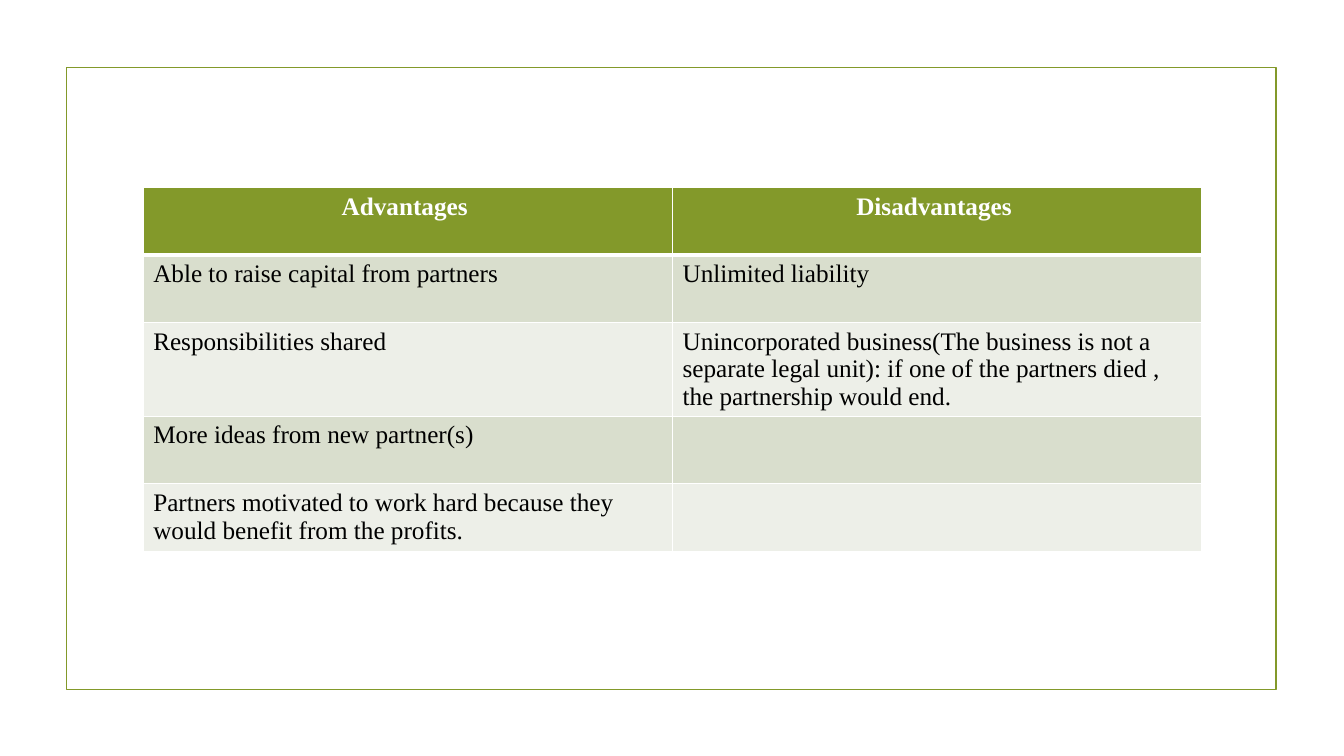
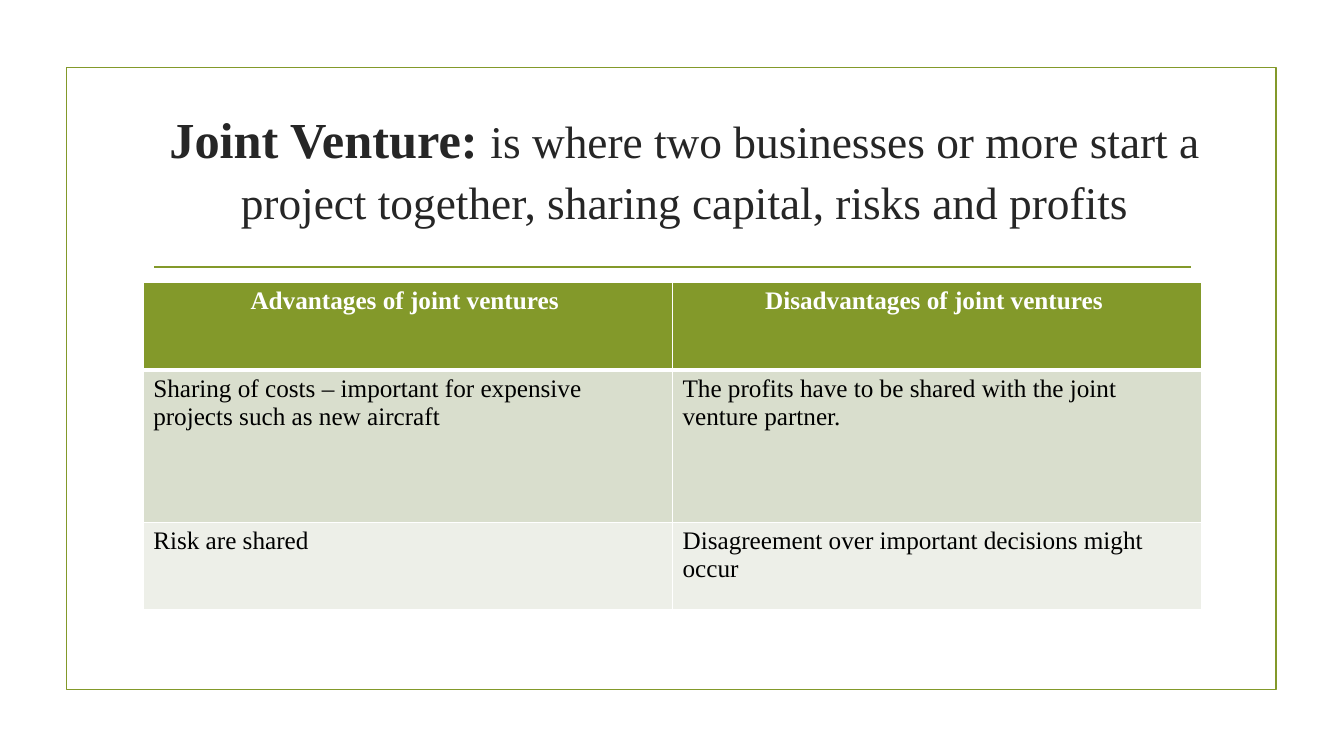
from dataclasses import dataclass

from lxml import etree
from pptx import Presentation
from pptx import util as u
from pptx.dml.color import RGBColor
from pptx.enum import shapes, text
from pptx.oxml import ns

PX = 9144


@dataclass(frozen=True)
class Theme:
    """Hold the colours, font and sizes that the slides share."""
    font: str = "Times New Roman"
    green: str = "83992A"
    ink: str = "262626"
    black: str = "000000"
    white: str = "FFFFFF"
    bands: tuple = ("D9DECD", "EDEFE8")
    term_size: float = 36
    title_size: float = 32.4
    table_size: float = 18
    line_width: float = 1.25
    grid_width: float = 1
    header_rule_width: float = 3


THEME = Theme()


def px(*lengths):
    """Turn pixel lengths into EMU."""
    return [u.Emu(length * PX) for length in lengths]


def rgb(colour):
    """Return the colour object for a hex string."""
    return RGBColor.from_string(colour)


def add_run(paragraph, words, size, colour, bold=False):
    """Append one styled run to a paragraph."""
    run = paragraph.add_run()
    run.text = words
    run.font.name = THEME.font
    run.font.size = u.Pt(size)
    run.font.bold = bold
    run.font.color.rgb = rgb(colour)


def style_line(shape):
    """Give a shape or connector the green outline."""
    shape.line.color.rgb = rgb(THEME.green)
    shape.line.width = u.Pt(THEME.line_width)


def add_frame(slide, left, top, width, height):
    """Draw the border around the slide content."""
    frame = slide.shapes.add_shape(shapes.MSO_SHAPE.RECTANGLE, *px(left, top, width, height))
    frame.shadow.inherit = False
    frame.fill.background()
    style_line(frame)


def add_title(slide, left, top, width, height, term, definition):
    """Write a bold term and its definition above a rule."""
    box = slide.shapes.add_textbox(*px(left, top, width, height))
    frame = box.text_frame
    frame.word_wrap = True
    frame.vertical_anchor = text.MSO_ANCHOR.MIDDLE
    paragraph = frame.paragraphs[0]
    paragraph.alignment = text.PP_ALIGN.CENTER
    paragraph.line_spacing = 1.1
    add_run(paragraph, term, THEME.term_size, THEME.ink, bold=True)
    add_run(paragraph, definition, THEME.title_size, THEME.ink)

    rule_left, rule_top = left - 1, top + height + 26
    rule = slide.shapes.add_connector(
        shapes.MSO_CONNECTOR.STRAIGHT,
        *px(rule_left, rule_top, rule_left + 1028, rule_top))
    style_line(rule)
    etree.SubElement(rule._element.spPr, ns.qn("a:effectLst"))


def set_borders(cell, bottom_width, top_width):
    """Draw white lines on the four sides of a cell."""
    properties = cell._tc.get_or_add_tcPr()
    widths = {"L": THEME.grid_width, "R": THEME.grid_width, "T": top_width, "B": bottom_width}
    for position, (side, width) in enumerate(widths.items()):
        line = etree.Element(ns.qn(f"a:ln{side}"), w=str(u.Pt(width)))
        fill = etree.SubElement(line, ns.qn("a:solidFill"))
        etree.SubElement(fill, ns.qn("a:srgbClr"), val=THEME.white)
        properties.insert(position, line)


def fill_cell(cell, words, row):
    """Style one cell by its row and write its text."""
    header = row == 0
    cell.fill.solid()
    cell.fill.fore_color.rgb = rgb(THEME.green if header else THEME.bands[(row - 1) % 2])
    set_borders(
        cell,
        THEME.header_rule_width if header else THEME.grid_width,
        THEME.header_rule_width if row == 1 else THEME.grid_width)
    if words:
        paragraph = cell.text_frame.paragraphs[0]
        paragraph.alignment = text.PP_ALIGN.CENTER if header else text.PP_ALIGN.LEFT
        add_run(paragraph, words, THEME.table_size,
                THEME.white if header else THEME.black, bold=header)


def add_comparison(slide, left, top, width, heights, rows):
    """Place a table with equal columns and the given row heights."""
    columns = len(rows[0])
    shape = slide.shapes.add_table(
        len(rows), columns, *px(left, top, width, sum(heights)))
    table = shape.table
    table.first_row = table.horz_banding = False
    for column in table.columns:
        column.width = px(width // columns)[0]
    for index, (height, row) in enumerate(zip(heights, rows)):
        table.rows[index].height = px(height)[0]
        for cell, words in zip(table.rows[index].cells, row):
            fill_cell(cell, words, index)


def new_slide(presentation):
    """Add a blank slide with the shared frame."""
    slide = presentation.slides.add_slide(presentation.slide_layouts[6])
    add_frame(slide, 66, 67, 1200, 617)
    return slide


def add_partnership_slide(presentation):
    """Build the slide comparing the sides of partnerships."""
    slide = new_slide(presentation)
    rows = [
        ("Advantages ", "Disadvantages "),
        ("Able to raise capital from partners", "Unlimited liability"),
        ("Responsibilities shared",
         "Unincorporated business(The business is not a separate legal unit): "
         "if one of the partners died , the partnership would end."),
        ("More ideas from new partner(s)", ""),
        ("Partners motivated to work hard because they would benefit from the profits.", ""),
    ]
    add_comparison(slide, 142, 186, 1050, [67] * len(rows), rows)


def add_joint_venture_slide(presentation):
    """Build the slide defining and comparing joint ventures."""
    slide = new_slide(presentation)
    add_title(slide, 154, 89, 1050, 150, "Joint Venture: ",
              "is where two businesses or more start a project together, "
              "sharing capital, risks and profits")
    rows = [
        ("Advantages of joint ventures ", "Disadvantages of joint ventures "),
        ("Sharing of costs – important for expensive projects such as new aircraft",
         "The profits have to be shared with the joint venture partner."),
        ("Risk are shared", "Disagreement over important decisions might occur"),
    ]
    add_comparison(slide, 142, 280, 1050, [87, 151, 87], rows)


def main():
    """Build and save the presentation."""
    presentation = Presentation()
    presentation.slide_width, presentation.slide_height = px(1333, 750)
    add_partnership_slide(presentation)
    add_joint_venture_slide(presentation)
    presentation.save("out.pptx")


if __name__ == "__main__":
    main()
